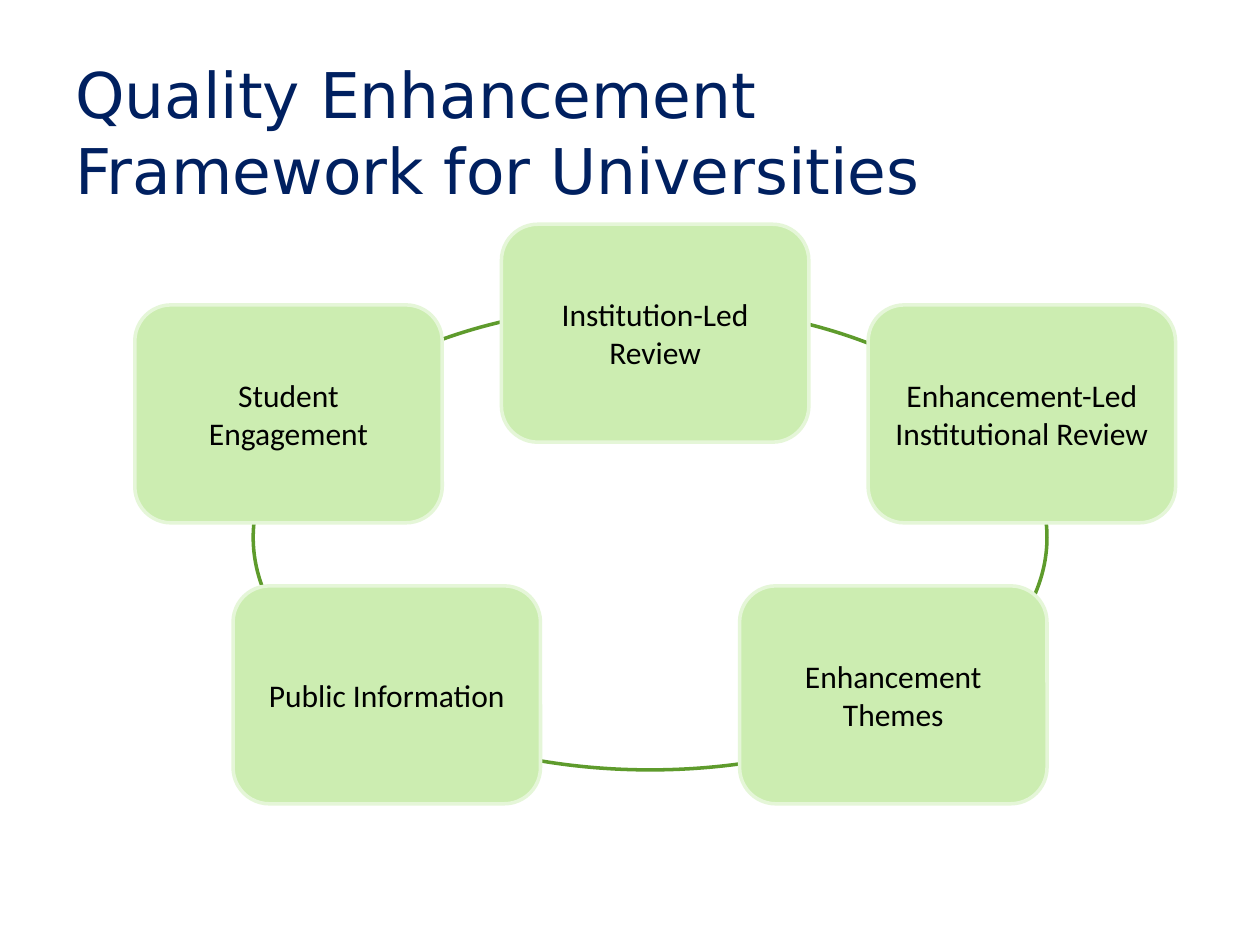
from pptx import Presentation
from pptx import util as u
from pptx.dml.color import RGBColor
from pptx.enum import shapes, text

NAVY = RGBColor(0x00, 0x20, 0x60)
GREEN = RGBColor(0x5E, 0x9B, 0x2C)
LIGHT = RGBColor(0xCC, 0xED, 0xB1)
PALE = RGBColor(0xE5, 0xF6, 0xD8)
BLACK = RGBColor(0, 0, 0)

deck = Presentation()
deck.slide_width, deck.slide_height = u.Inches(10), u.Inches(7.5)
slide = deck.slides.add_slide(deck.slide_layouts[6])


def place(kind, left, top, wide, high, line):
    """Add a shadowless shape, in inches, with a 2 pt outline."""
    shape = slide.shapes.add_shape(kind, *map(u.Inches, (left, top, wide, high)))
    shape.shadow.inherit = False
    shape.line.color.rgb = line
    shape.line.width = u.Pt(2)
    return shape


def write(frame, words, font, size, color, align):
    """Put one wrapped, vertically centred run into a text frame."""
    frame.word_wrap = True
    frame.vertical_anchor = text.MSO_ANCHOR.MIDDLE
    para = frame.paragraphs[0]
    para.alignment = align
    run = para.add_run()
    run.text = words
    run.font.name, run.font.size = font, u.Pt(size)
    run.font.color.rgb = color


# Ring behind the five steps
ring = place(shapes.MSO_SHAPE.OVAL, 2.01, 2.42, 6.3, 3.69, GREEN)
ring.fill.background()

title = slide.shapes.add_textbox(*map(u.Inches, (0.5, 0.3, 7.26, 1.48)))
write(title.text_frame, "Quality Enhancement Framework for Universities",
      "DejaVu Sans", 36, NAVY, text.PP_ALIGN.LEFT)

# Each row: top, first left, step to the next box, labels
WIDE, HIGH = 2.44, 1.73
SIDE, STEP = 1.07, 2.91
rows = [
    (2.42, SIDE, 2 * STEP,
     ["Student Engagement", "Enhancement-Led Institutional Review"]),
    (1.78, SIDE + STEP, 0, ["Institution-Led Review"]),
    (4.65, 1.85, 4.02, ["Public Information", "Enhancement Themes"]),
]
for top, left, step, labels in rows:
    for col, label in enumerate(labels):
        box = place(shapes.MSO_SHAPE.ROUNDED_RECTANGLE,
                    left + col * step, top, WIDE, HIGH, PALE)
        box.fill.solid()
        box.fill.fore_color.rgb = LIGHT
        write(box.text_frame, label, "Calibri", 18, BLACK, text.PP_ALIGN.CENTER)

deck.save("out.pptx")
